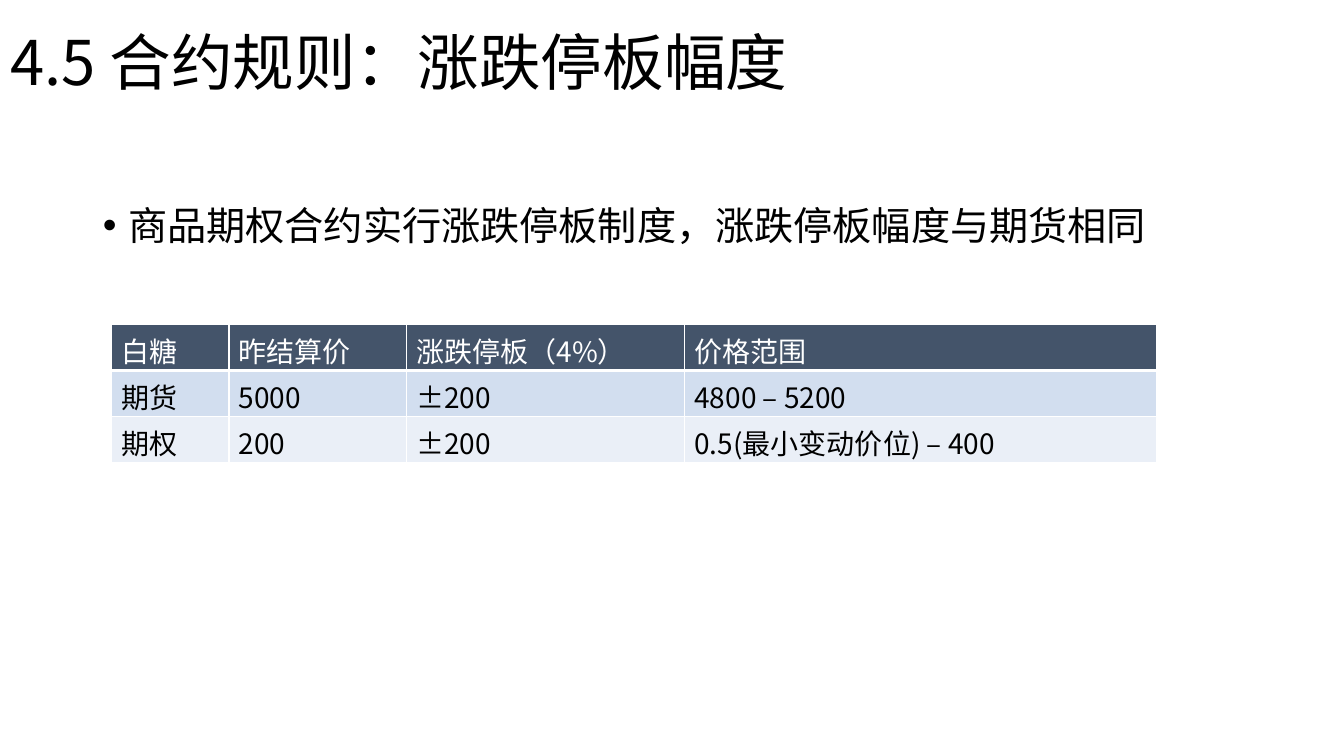
from lxml import etree
from pptx import Presentation
from pptx import util as u
from pptx.dml.color import RGBColor
from pptx.enum import text
from pptx.oxml import ns

BLACK = RGBColor(0x00, 0x00, 0x00)
WHITE = RGBColor(0xFF, 0xFF, 0xFF)
HEADER_FILL = RGBColor(0x44, 0x54, 0x6A)
BAND_FILLS = [RGBColor(0xD2, 0xDE, 0xEF), RGBColor(0xEA, 0xEF, 0xF7)]

LATIN_FONT = "Calibri"
CHINESE_FONT = "Noto Sans CJK SC"

COLUMN_WIDTHS = [2.97, 4.47, 7.01, 11.89]
ROW_HEIGHTS = [1.1, 1.17, 1.1]
PRICE_LIMITS = [
    ["白糖", "昨结算价", "涨跌停板（4%）", "价格范围"],
    ["期货", "5000", "±200", "4800 – 5200"],
    ["期权", "200", "±200", "0.5(最小变动价位) – 400"],
]


def apply_format(target, values):
    for name, value in values.items():
        setattr(target, name, value)


def place(shape, left, top, width, height):
    apply_format(shape, {"left": u.Cm(left), "top": u.Cm(top),
                         "width": u.Cm(width), "height": u.Cm(height)})


def add_run(paragraph, words, size, color, font_name):
    run = paragraph.add_run()
    run.text = words
    apply_format(run.font, {"size": u.Pt(size), "name": font_name})
    run.font.color.rgb = color
    east_asian = etree.SubElement(run.font._element, ns.qn("a:ea"))
    east_asian.set("typeface", CHINESE_FONT)


def format_frame(frame, anchor):
    apply_format(frame, {"word_wrap": True, "vertical_anchor": anchor,
                         "auto_size": text.MSO_AUTO_SIZE.NONE})


def fill_title(shape):
    place(shape, 0, 0.66, 28.55, 1.96)
    format_frame(shape.text_frame, text.MSO_ANCHOR.MIDDLE)
    paragraph = shape.text_frame.paragraphs[0]
    apply_format(paragraph, {"alignment": text.PP_ALIGN.LEFT, "line_spacing": 0.9})
    add_run(paragraph, "4.5 合约规则：", 44, BLACK, CHINESE_FONT)
    add_run(paragraph, "涨跌停板幅度", 44, BLACK, LATIN_FONT)


def fill_body(shape):
    place(shape, 2.34, 5.08, 28.3, 2.06)
    format_frame(shape.text_frame, text.MSO_ANCHOR.TOP)
    paragraph = shape.text_frame.paragraphs[0]
    apply_format(paragraph, {"line_spacing": 0.9, "space_before": u.Pt(10)})
    add_run(paragraph, "商品期权合约实行涨跌停板制度，涨跌停板幅度与期货相同",
            28, BLACK, LATIN_FONT)
    # Hanging bullet
    properties = paragraph._p.get_or_add_pPr()
    properties.set("marL", str(u.Cm(0.64)))
    properties.set("indent", str(u.Cm(-0.64)))
    etree.SubElement(properties, ns.qn("a:buFont")).set("typeface", "Arial")
    etree.SubElement(properties, ns.qn("a:buChar")).set("char", "•")


def set_borders(cell, bottom_width):
    properties = cell._tc.get_or_add_tcPr()
    widths = {"lnL": 1, "lnR": 1, "lnT": 1, "lnB": bottom_width}
    for position, (side, width) in enumerate(widths.items()):
        line = etree.Element(ns.qn(f"a:{side}"), w=str(u.Pt(width)))
        solid = etree.SubElement(line, ns.qn("a:solidFill"))
        etree.SubElement(solid, ns.qn("a:srgbClr")).set("val", str(WHITE))
        properties.insert(position, line)


def fill_cell(cell, words, fill, color, bottom_width):
    cell.fill.solid()
    cell.fill.fore_color.rgb = fill
    # The tall Chinese line needs the space of the lower margin
    apply_format(cell, {"margin_left": u.Cm(0.25), "margin_right": u.Cm(0.25),
                        "margin_top": u.Cm(0.13), "margin_bottom": 0})
    add_run(cell.text_frame.paragraphs[0], words, 20, color, CHINESE_FONT)
    set_borders(cell, bottom_width)


def add_price_table(slide):
    frame = slide.shapes.add_table(
        len(ROW_HEIGHTS), len(COLUMN_WIDTHS), u.Cm(2.8), u.Cm(8.18),
        u.Cm(sum(COLUMN_WIDTHS)), u.Cm(sum(ROW_HEIGHTS)))
    table = frame.table
    for column, width in zip(table.columns, COLUMN_WIDTHS):
        column.width = u.Cm(width)
    for index, (row, height) in enumerate(zip(table.rows, ROW_HEIGHTS)):
        row.height = u.Cm(height)
        if index == 0:
            style = (HEADER_FILL, WHITE, 3)
        else:
            style = (BAND_FILLS[(index - 1) % 2], BLACK, 1)
        for cell, words in zip(row.cells, PRICE_LIMITS[index]):
            fill_cell(cell, words, *style)


def main():
    presentation = Presentation()
    apply_format(presentation, {"slide_width": u.Cm(33.87),
                                "slide_height": u.Cm(19.05)})
    slide = presentation.slides.add_slide(presentation.slide_layouts[1])

    # Heading and statement
    fill_title(slide.shapes.title)
    fill_body(slide.placeholders[1])

    # Price limits of futures and options
    add_price_table(slide)

    presentation.save("out.pptx")


if __name__ == "__main__":
    main()
